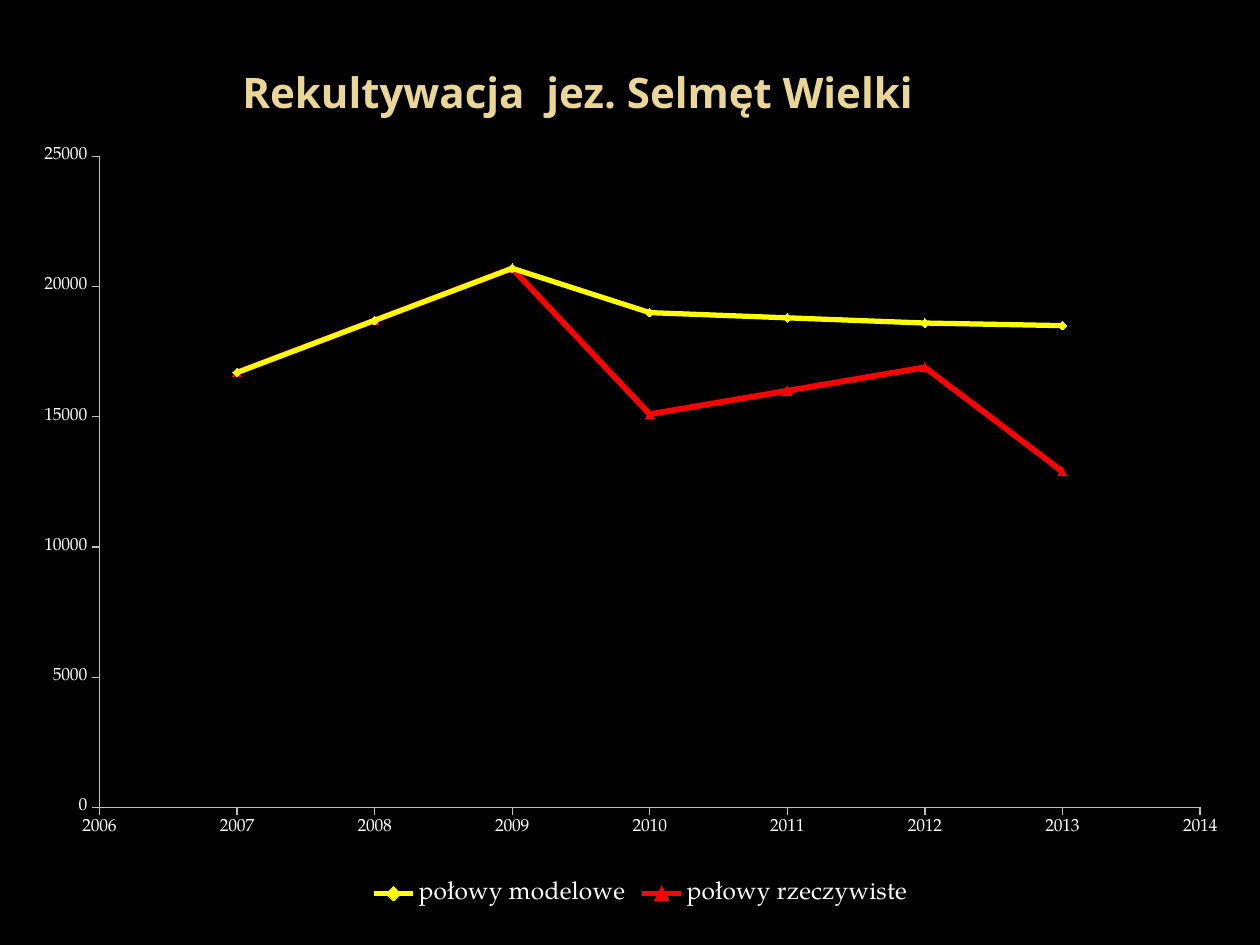
from lxml.etree import SubElement
from pptx import Presentation
from pptx.chart.data import XyChartData
from pptx.dml.color import RGBColor
from pptx.enum.chart import XL_CHART_TYPE, XL_LEGEND_POSITION, XL_MARKER_STYLE, XL_TICK_MARK
from pptx.enum.text import MSO_ANCHOR, PP_ALIGN
from pptx.oxml.ns import qn
from pptx.util import Inches, Pt

BLACK = RGBColor(0, 0, 0)
WHITE = RGBColor(255, 255, 255)
GOLD = RGBColor(0xEA, 0xD6, 0x96)
GREY = RGBColor(0xBF, 0xBF, 0xBF)
YELLOW = RGBColor(255, 255, 0)
RED = RGBColor(255, 0, 0)
YEARS = range(2007, 2014)
LINES = [
    ("połowy modelowe", [16700, 18700, 20700, 19000, 18800, 18600, 18500],
     YELLOW, 3, XL_MARKER_STYLE.DIAMOND),
    ("połowy rzeczywiste", [16700, 18700, 20700, 15100, 16000, 16900, 12900],
     RED, 3.25, XL_MARKER_STYLE.TRIANGLE),
]


def style(font, size, face, color, bold=False):
    font.size = Pt(size)
    font.name = face
    font.bold = bold
    font.color.rgb = color


def write(frame, text, align=PP_ALIGN.LEFT, **form):
    frame.word_wrap = True
    frame.vertical_anchor = MSO_ANCHOR.MIDDLE
    para = frame.paragraphs[0]
    para.alignment = align
    run = para.add_run()
    run.text = text
    style(run.font, **form)


class Deck:
    head = "Open Sans"
    body = "TeX Gyre Pagella"

    def __init__(self):
        self.show = Presentation()
        self.show.slide_width = Inches(10)
        self.show.slide_height = Inches(7.5)
        self.slide = self.show.slides.add_slide(self.show.slide_layouts[5])
        fill = self.slide.background.fill
        fill.solid()
        fill.fore_color.rgb = BLACK

    def title(self, text, left, top, width, height):
        box = self.slide.shapes.title
        box.left, box.top = Inches(left), Inches(top)
        box.width, box.height = Inches(width), Inches(height)
        write(box.text_frame, text, align=PP_ALIGN.CENTER,
              size=24, face=self.head, color=GOLD, bold=True)

    def axis(self, axis, low, high, step):
        axis.minimum_scale, axis.maximum_scale = low, high
        axis.major_unit = step
        axis.has_major_gridlines = False
        axis.major_tick_mark = XL_TICK_MARK.OUTSIDE
        axis.minor_tick_mark = XL_TICK_MARK.NONE
        axis.tick_labels.number_format = "General"
        axis.tick_labels.number_format_is_linked = False
        axis.format.line.color.rgb = GREY
        axis.format.line.width = Pt(0.75)

    def plot(self, chart, **place):
        area = chart._chartSpace.chart.plotArea
        for old in area.findall(qn("c:layout")):
            area.remove(old)
        layout = SubElement(area, qn("c:layout"))
        area.insert(0, layout)
        manual = SubElement(layout, qn("c:manualLayout"))
        rules = {"layoutTarget": "inner", "xMode": "edge", "yMode": "edge", **place}
        for tag, val in rules.items():
            SubElement(manual, qn("c:" + tag)).set("val", str(val))

    def chart(self, lines, left, top, width, height):
        data = XyChartData()
        for name, vals, *_ in lines:
            row = data.add_series(name)
            for year, val in zip(YEARS, vals):
                row.add_data_point(year, val)
        chart = self.slide.shapes.add_chart(
            XL_CHART_TYPE.XY_SCATTER_SMOOTH, Inches(left), Inches(top),
            Inches(width), Inches(height), data).chart
        style(chart.font, 10, self.body, WHITE)
        chart.has_title = False
        chart.has_legend = True
        chart.legend.position = XL_LEGEND_POSITION.BOTTOM
        chart.legend.include_in_layout = False
        style(chart.legend.font, 14, self.body, WHITE)
        self.axis(chart.category_axis, 2006, 2014, 1)
        self.axis(chart.value_axis, 0, 25000, 5000)
        self.plot(chart, x=0.053, y=0.015, w=0.909, h=0.85)
        chart.plots[0].vary_by_categories = False
        for row, (_, _, color, width, mark) in zip(chart.plots[0].series, lines):
            row.smooth = True
            row.format.line.color.rgb = color
            row.format.line.width = Pt(width)
            row.marker.style = mark
            row.marker.size = 5
            row.marker.format.fill.solid()
            row.marker.format.fill.fore_color.rgb = color
            row.marker.format.line.color.rgb = color

    def save(self):
        self.show.save("out.pptx")


def main():
    deck = Deck()
    deck.title("Rekultywacja  jez. Selmęt Wielki", 0.5, 0.3, 8.17, 0.85)
    deck.chart(LINES, 0.28, 1.15, 9.61, 6.08)
    deck.save()


if __name__ == "__main__":
    main()
